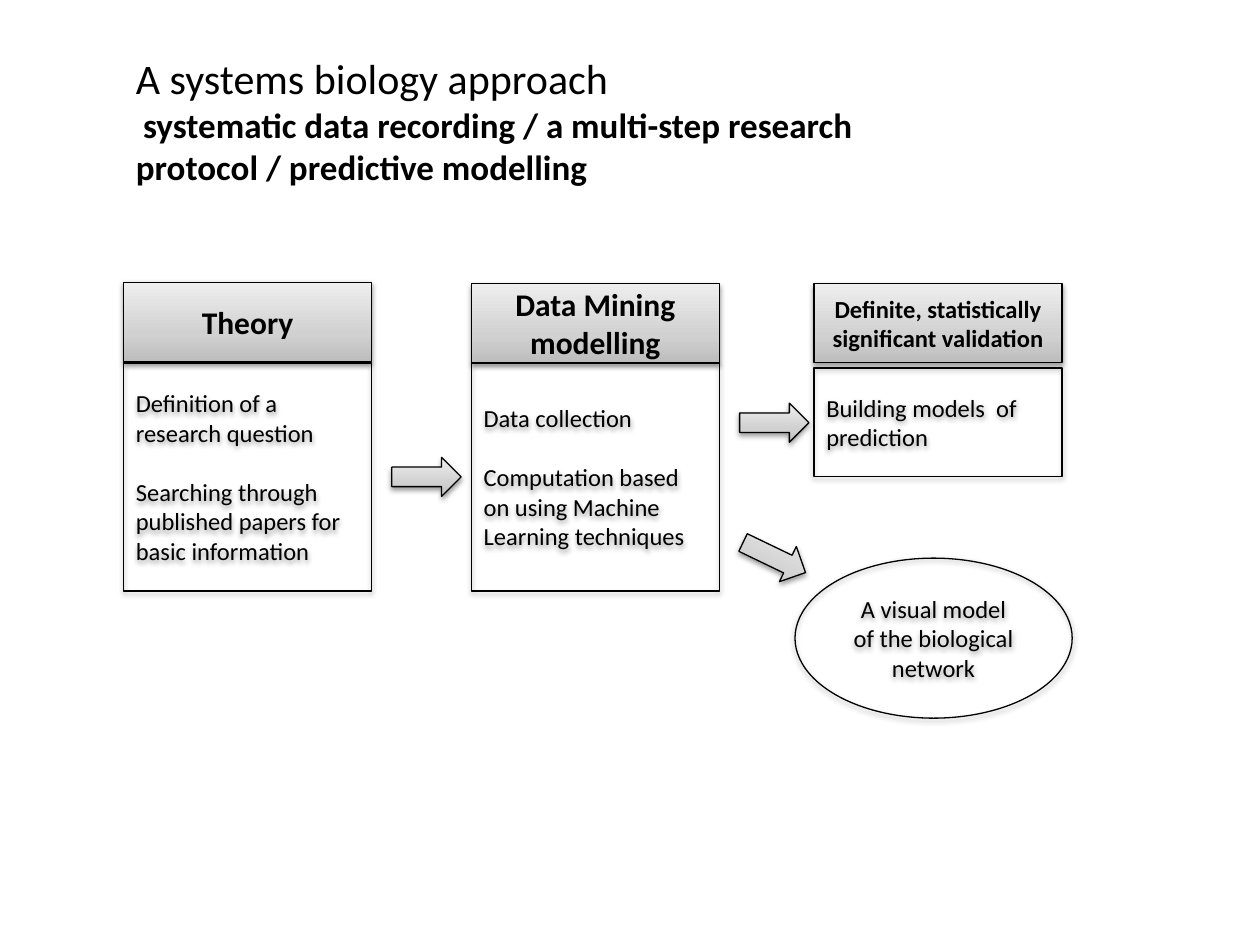
from copy import deepcopy

from lxml import etree
from pptx import Presentation
from pptx.dml.color import RGBColor
from pptx.enum import shapes, text
from pptx.oxml import ns
from pptx.util import Inches, Pt

BLACK = RGBColor(0x00, 0x00, 0x00)
GREYS = [(0, RGBColor(0xBD, 0xBD, 0xBD)),
         (0.35, RGBColor(0xD1, 0xD1, 0xD1)),
         (1, RGBColor(0xEE, 0xEE, 0xEE))]
LEFT, CENTER = text.PP_ALIGN.LEFT, text.PP_ALIGN.CENTER
SHAPE = shapes.MSO_SHAPE
BOX_W, HEAD_H = 1.97, 0.63


class Diagram:
    font = "Calibri"
    line_width = Pt(0.75)

    def __init__(self, slide):
        self.s = slide

    def run(self, p, words, size, bold=False):
        r = p.add_run()
        r.text = words
        r.font.name, r.font.size, r.font.bold = self.font, Pt(size), bold
        r.font.color.rgb = BLACK

    def shape(self, kind, x, y, w, h, shaded=False):
        """Add an outlined shape with a soft shadow, optionally grey-graded."""
        sp = self.s.shapes.add_shape(kind, Inches(x), Inches(y), Inches(w), Inches(h))
        if shaded:
            self.shade(sp)
        else:
            sp.fill.background()
        sp.line.color.rgb = BLACK
        sp.line.width = self.line_width
        self.shadow(sp)
        return sp

    def shade(self, sp):
        sp.fill.gradient()
        sp.fill.gradient_angle = 90
        stops = sp._element.spPr.find(".//" + ns.qn("a:gsLst"))
        stops.append(deepcopy(stops[0]))
        for stop, (position, color) in zip(sp.fill.gradient_stops, GREYS):
            stop.position = position
            stop.color.rgb = color

    def shadow(self, sp):
        sp.shadow.inherit = False
        effects = sp._element.spPr.find(ns.qn("a:effectLst"))
        outer = etree.SubElement(effects, ns.qn("a:outerShdw"), blurRad=str(Pt(3.1)),
                                 dist=str(Pt(1.6)), dir="5400000", rotWithShape="0")
        color = etree.SubElement(outer, ns.qn("a:srgbClr"), val=str(BLACK))
        etree.SubElement(color, ns.qn("a:alpha"), val="38000")

    def label(self, sp, paragraphs, size, bold=False, align=LEFT):
        tf = sp.text_frame
        tf.word_wrap = True
        tf.vertical_anchor = text.MSO_ANCHOR.MIDDLE
        for i, words in enumerate(paragraphs):
            p = tf.add_paragraph() if i else tf.paragraphs[0]
            p.alignment = align
            if i:
                p.space_before = Pt(17)
            self.run(p, words, size, bold)

    def header(self, x, y, words, size):
        sp = self.shape(SHAPE.RECTANGLE, x, y, BOX_W, HEAD_H, shaded=True)
        self.label(sp, [words], size, bold=True, align=CENTER)

    def body(self, x, y, h, paragraphs):
        self.label(self.shape(SHAPE.RECTANGLE, x, y, BOX_W, h), paragraphs, 14)

    def ellipse(self, x, y, w, h, words):
        self.label(self.shape(SHAPE.OVAL, x, y, w, h), [words], 14, align=CENTER)

    def arrow(self, x, y, rotation=0):
        sp = self.shape(SHAPE.RIGHT_ARROW, x, y, 0.55, 0.31, shaded=True)
        sp.rotation = rotation

    def title(self, x, y, w, h, heading, subtitle):
        sp = self.s.shapes.add_textbox(Inches(x), Inches(y), Inches(w), Inches(h))
        tf = sp.text_frame
        tf.word_wrap = True
        tf.auto_size = text.MSO_AUTO_SIZE.SHAPE_TO_FIT_TEXT
        self.run(tf.paragraphs[0], heading, 24)
        p = tf.add_paragraph()
        self.run(p, " ", 18)
        self.run(p, subtitle, 20, bold=True)


def main():
    prs = Presentation()
    prs.slide_width, prs.slide_height = Inches(10), Inches(7.5)
    d = Diagram(prs.slides.add_slide(prs.slide_layouts[6]))

    columns = [
        (0.98, 2.24, "Theory", 18, 2.88, 1.81,
         ["Definition of a research question",
          "Searching through published papers for basic information"]),
        (3.74, 2.25, "Data Mining modelling", 18, 2.88, 1.81,
         ["Data collection",
          "Computation based on using Machine Learning techniques"]),
        (6.46, 2.25, "Definite, statistically significant validation", 14, 2.92, 0.86,
         ["Building models  of prediction"]),
    ]
    for x, head_y, heading, size, body_y, body_h, paragraphs in columns:
        d.header(x, head_y, heading, size)
        d.body(x, body_y, body_h, paragraphs)

    d.ellipse(6.31, 4.43, 2.2, 1.27, "A visual model of the biological network")
    d.arrow(3.11, 3.63)
    d.arrow(5.87, 3.2)
    d.arrow(5.87, 4.27, rotation=25.7)
    d.title(0.98, 0.37, 7.01, 1.18, "A systems biology approach",
            "systematic data recording / a multi-step research protocol / predictive modelling")

    prs.save("out.pptx")


if __name__ == "__main__":
    main()
